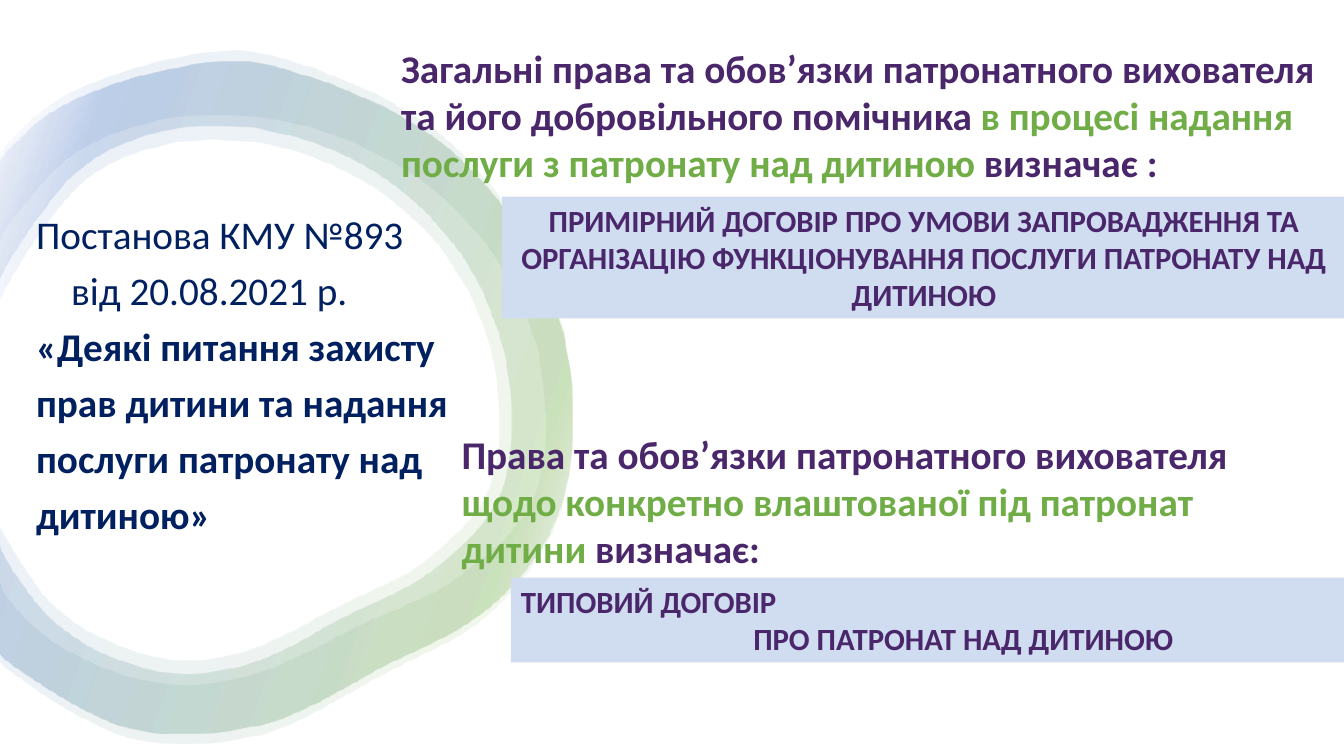
from dataclasses import dataclass

from lxml import etree
from pptx import Presentation, util as u
from pptx.dml.color import RGBColor
from pptx.enum import shapes, text
from pptx.oxml.ns import qn

Point = tuple[float, float]

COLORS = {
    "white": "FFFFFF",
    "purple": "4A266B",
    "green": "70AD47",
    "blue": "4472C4",
    "navy": "002060",
    "banner": "D0DCF0",
}
FONT = "Calibri"
RING_UNIT = u.Pt(0.72)  # grid step of the ring coordinates
RING_CENTER = (200, 400)
RING_LEFT_EDGE = -2
RING_STOPS = ((2, "white"), (16, "green"), (85, "blue"), (100, "white"))
RING_OPACITY = 10
CURVE_STEPS = 8

RING_OUTER = (
    (-30, 190), (62, 105), (206, 62), (310, 77), (433, 138), (520, 237),
    (565, 365), (556, 504), (486, 602), (376, 663), (259, 719), (127, 722),
    (4, 653), (-30, 610))
RING_INNER = (
    (-30, 490), (46, 609), (145, 663), (241, 660), (345, 610), (431, 564),
    (497, 488), (504, 373), (467, 268), (394, 186), (294, 136), (187, 126),
    (93, 158), (31, 226), (-30, 330))


@dataclass(frozen=True)
class Stroke:
    """Stretch of the ring's two edges about its centre, across and down."""
    outer: Point = (1, 1)
    inner: Point = (1, 1)


@dataclass(frozen=True)
class Span:
    words: str
    color: str
    bold: bool = True


@dataclass(frozen=True)
class Line:
    spans: tuple[Span, ...]
    indent: float = 0
    centered: bool = False


@dataclass(frozen=True)
class Block:
    left: float
    top: float
    width: float
    height: float
    size: float
    lines: tuple[Line, ...]
    fill: str | None = None
    spacing: float | None = None


STROKES = (
    Stroke(outer=(1, 1.03), inner=(1.11, 1.04)),
    Stroke(),
    Stroke(inner=(0.96, 0.95)),
    Stroke(),
)

BLOCKS = (
    Block(279.4, 28, 682.6, 108.7, 28, (
        Line((
            Span("Загальні права та обов’язки патронатного вихователя "
                 "та його добровільного помічника", "purple"),
            Span(" в процесі надання послуги з патронату над дитиною ", "green"),
            Span("визначає :", "purple"))),)),
    Block(358.6, 140.4, 602.6, 87.1, 22, (
        Line((Span("ПРИМІРНИЙ ДОГОВІР ПРО УМОВИ ЗАПРОВАДЖЕННЯ ТА ОРГАНІЗАЦІЮ "
                   "ФУНКЦІОНУВАННЯ ПОСЛУГИ ПАТРОНАТУ НАД ДИТИНОЮ", "purple"),),
             centered=True),), fill="banner"),
    Block(322.6, 303.8, 565.9, 108.7, 28, (
        Line((
            Span("Права та обов’язки патронатного вихователя ", "purple"),
            Span("щодо конкретно влаштованої під патронат дитини ", "green"),
            Span("визначає:", "purple"))),)),
    Block(365, 412.6, 596.2, 60.5, 22, (
        Line((Span("ТИПОВИЙ ДОГОВІР", "purple"),)),
        Line((Span("ПРО ПАТРОНАТ НАД ДИТИНОЮ", "purple"),), indent=166)),
        fill="banner"),
    Block(18.7, 140.4, 347.8, 247, 28, (
        Line((Span("Постанова КМУ №893", "navy", bold=False),)),
        Line((Span("від 20.08.2021 р.", "navy", bold=False),), indent=25),
        Line((Span("«Деякі питання захисту прав дитини та надання послуги "
                   "патронату над дитиною»", "navy"),))), spacing=40),
)


def rgb(name: str) -> RGBColor:
    return RGBColor.from_string(COLORS[name])


def smooth(points: tuple[Point, ...]) -> list[Point]:
    """Run a Catmull-Rom curve through the points."""
    padded = (points[0], *points, points[-1])
    curve = [points[0]]
    for a, b, c, d in zip(padded, padded[1:], padded[2:], padded[3:]):
        for step in range(1, CURVE_STEPS + 1):
            t = step / CURVE_STEPS
            x, y = (
                (2 * q + (r - p) * t + (2 * p - 5 * q + 4 * r - s) * t ** 2
                 + (3 * q - p - 3 * r + s) * t ** 3) / 2
                for p, q, r, s in zip(a, b, c, d))
            curve.append((x, y))
    return curve


def ring_edge(points: tuple[Point, ...], stretch: Point) -> list[Point]:
    """Smooth and stretch an edge, cutting it at the left of the slide."""
    edge = []
    for point in smooth(points):
        x, y = (c + (p - c) * s for p, c, s in zip(point, RING_CENTER, stretch))
        edge.append((max(x, RING_LEFT_EDGE), y))
    return edge


def draw_stroke(slide, stroke: Stroke) -> None:
    start, *rest = (ring_edge(RING_OUTER, stroke.outer)
                    + ring_edge(RING_INNER, stroke.inner))
    builder = slide.shapes.build_freeform(*start, scale=RING_UNIT)
    builder.add_line_segments(rest, close=True)
    ring = builder.convert_to_shape()
    ring.shadow.inherit = False
    ring.line.fill.background()
    ring.fill.gradient()
    ring.fill.gradient_angle = 160
    stops = next(ring._element.iter(qn("a:gsLst")))
    for old_stop in list(stops):
        stops.remove(old_stop)
    for position, color in RING_STOPS:
        stop = etree.SubElement(stops, qn("a:gs"), pos=str(position * 1000))
        tint = etree.SubElement(stop, qn("a:srgbClr"), val=COLORS[color])
        etree.SubElement(tint, qn("a:alpha"), val=str(RING_OPACITY * 1000))


def draw_block(slide, block: Block) -> None:
    place = [u.Pt(n) for n in (block.left, block.top, block.width, block.height)]
    if block.fill:
        box = slide.shapes.add_shape(shapes.MSO_SHAPE.RECTANGLE, *place)
        box.shadow.inherit = False
        box.fill.solid()
        box.fill.fore_color.rgb = rgb(block.fill)
        box.line.fill.background()
    else:
        box = slide.shapes.add_textbox(*place)
    frame = box.text_frame
    frame.word_wrap = True
    frame.text = "\n".join("" for _ in block.lines)
    for paragraph, line in zip(frame.paragraphs, block.lines):
        paragraph.alignment = (
            text.PP_ALIGN.CENTER if line.centered else text.PP_ALIGN.LEFT)
        if block.spacing:
            paragraph.line_spacing = u.Pt(block.spacing)
        if line.indent:
            paragraph._p.get_or_add_pPr().set("marL", str(u.Pt(line.indent)))
        for span in line.spans:
            run = paragraph.add_run()
            run.text = span.words
            run.font.name = FONT
            run.font.size = u.Pt(block.size)
            run.font.bold = span.bold
            run.font.color.rgb = rgb(span.color)


def main() -> None:
    deck = Presentation()
    deck.slide_width, deck.slide_height = u.Pt(960), u.Pt(540)
    slide = deck.slides.add_slide(deck.slide_layouts[6])
    slide.background.fill.solid()
    slide.background.fill.fore_color.rgb = rgb("white")
    for stroke in STROKES:
        draw_stroke(slide, stroke)
    for block in BLOCKS:
        draw_block(slide, block)
    deck.save("out.pptx")


if __name__ == "__main__":
    main()
